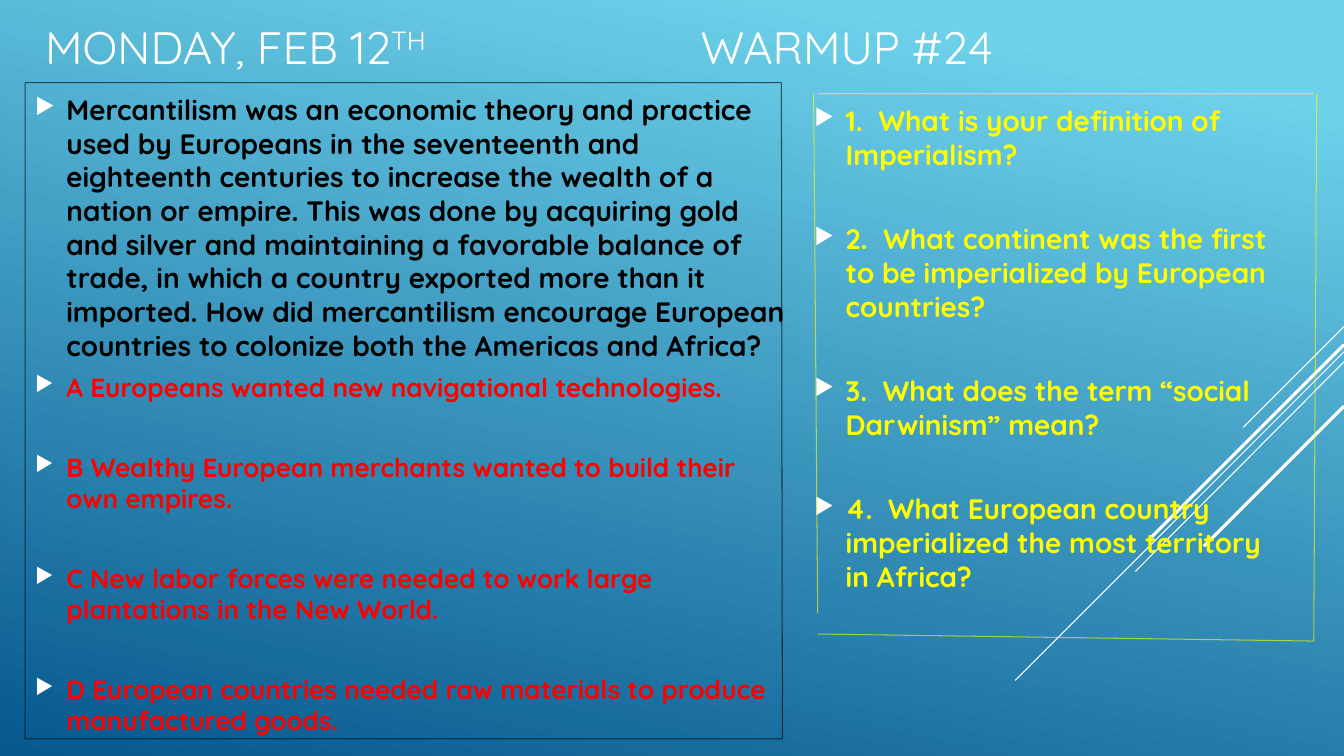
import pptx
import pptx.dml.color
import pptx.enum.shapes
import pptx.enum.text
import pptx.oxml
import pptx.oxml.ns
import pptx.util

RGBColor = pptx.dml.color.RGBColor
Pt = pptx.util.Pt

WHITE = RGBColor(0xFF, 0xFF, 0xFF)
BLACK = RGBColor(0x00, 0x00, 0x00)
RED = RGBColor(0xFF, 0x00, 0x00)
YELLOW = RGBColor(0xFF, 0xFF, 0x00)
SKY = RGBColor(0x6E, 0xD2, 0xEB)
DEEP_BLUE = RGBColor(0x06, 0x58, 0x8E)

STREAKS = [
    ((1333, 324), (1233, 424), 0.75),
    ((1333, 349), (1007, 675), 0.75),
    ((1333, 359), (1126, 567), 0.75),
    ((1333, 342), (1142, 533), 2.25),
    ((1333, 403), (1194, 542), 2.25),
]
QUESTION_FRAME = [
    ((775, 82), (776, 733)),
    ((775, 82), (25, 82)),
    ((25, 82), (25, 733)),
    ((25, 733), (776, 733)),
]
WARMUP_FRAME = [
    ((807, 93), (811, 608)),
    ((811, 93), (1303, 93)),
    ((1306, 93), (1303, 636)),
    ((1303, 636), (811, 629)),
]
QUESTION = (
    "Mercantilism was an economic theory and practice used by Europeans in the "
    "seventeenth and eighteenth centuries to increase the wealth of a nation or "
    "empire. This was done by acquiring gold and silver and maintaining a favorable "
    "balance of trade, in which a country exported more than it imported. How did "
    "mercantilism encourage European countries to colonize both the Americas and Africa?"
)
ANSWERS = [
    "A Europeans wanted new navigational technologies.",
    "B Wealthy European merchants wanted to build their own empires.",
    "C New labor forces were needed to work large plantations in the New World.",
    "D European countries needed raw materials to produce manufactured goods.",
]
WARMUPS = [
    "1.  What is your definition of Imperialism?",
    "2.  What continent was the first to be imperialized by European countries?",
    "3.  What does the term “social Darwinism” mean?",
    "4.  What European country imperialized the most territory in Africa?",
]
QUESTION_FORMAT = {"size": Pt(20), "color": BLACK, "bold": True}
ANSWER_FORMAT = {"size": Pt(18.7), "color": RED, "bold": True}
WARMUP_FORMAT = {"size": Pt(20), "color": YELLOW, "bold": True}
TITLE_FORMAT = {"size": Pt(32.4), "color": WHITE, "bold": False}


class SlideBuilder:
    FONT = "Quicksand"
    SCALE = 9144  # EMU in one px, 100 px to the inch
    INSET = 10
    INDENT = 31

    def __init__(self, deck):
        self.page = deck.slides.add_slide(deck.slide_layouts[6])

    @classmethod
    def px(cls, length):
        return pptx.util.Emu(length * cls.SCALE)

    @staticmethod
    def append_xml(parent, tag, content="", **attributes):
        values = "".join(f' {name}="{value}"' for name, value in attributes.items())
        namespace = pptx.oxml.ns.nsdecls("a")
        parent.append(pptx.oxml.parse_xml(
            f"<a:{tag} {namespace}{values}>{content}</a:{tag}>"))

    def background(self, colors, positions, angle):
        """Fill the page with a gradient; the angle runs clockwise."""
        fill = self.page.background.fill
        fill.gradient()
        fill.gradient_angle = 360 - angle
        for stop, color, position in zip(fill.gradient_stops, colors, positions):
            stop.color.rgb = color
            stop.position = position

    def line(self, start, end, color, width=0.75, opacity=100):
        connector = self.page.shapes.add_connector(
            pptx.enum.shapes.MSO_CONNECTOR.STRAIGHT,
            *(self.px(length) for length in (*start, *end)))
        connector.line.color.rgb = color
        connector.line.width = Pt(width)
        properties = connector._element.spPr
        if opacity < 100:
            color_node = properties.find(".//" + pptx.oxml.ns.qn("a:srgbClr"))
            self.append_xml(color_node, "alpha", val=opacity * 1000)
        self.append_xml(properties, "effectLst")

    def text_box(self, left, top, width, height, anchor):
        box = self.page.shapes.add_textbox(
            *(self.px(length) for length in (left, top, width, height)))
        inset = self.px(self.INSET)
        settings = {
            "word_wrap": True, "vertical_anchor": anchor,
            "margin_left": inset, "margin_right": inset,
            "margin_top": inset, "margin_bottom": inset,
        }
        for name, value in settings.items():
            setattr(box.text_frame, name, value)
        return box.text_frame

    def span(self, para, text, style):
        span = para.add_run()
        span.text = text
        span.font.name = self.FONT
        for name, value in style.items():
            if name == "color":
                span.font.color.rgb = value
            else:
                setattr(span.font, name, value)
        return span

    def title(self, area, day, suffix, heading, tab):
        """Write the day with a raised suffix, then the heading at a tab stop."""
        frame = self.text_box(*area, pptx.enum.text.MSO_ANCHOR.MIDDLE)
        para = frame.paragraphs[0]
        self.append_xml(para._p.get_or_add_pPr(), "tabLst",
                        f'<a:tab pos="{self.px(tab)}" algn="l"/>')
        self.span(para, day, TITLE_FORMAT)
        raised = self.span(para, suffix, TITLE_FORMAT)
        raised._r.get_or_add_rPr().set("baseline", "30000")
        self.span(para, "\t" + heading, TITLE_FORMAT)

    def bullets(self, area, items):
        """Write items of (text, format, line spacing, space after in points)."""
        frame = self.text_box(*area, pptx.enum.text.MSO_ANCHOR.TOP)
        for index, (text, style, pitch, gap) in enumerate(items):
            para = frame.add_paragraph() if index else frame.paragraphs[0]
            para.line_spacing = Pt(pitch)
            para.space_after = Pt(gap)
            properties = para._p.get_or_add_pPr()
            properties.set("marL", str(self.px(self.INDENT)))
            properties.set("indent", str(self.px(-self.INDENT)))
            self.append_xml(properties, "buClr", f'<a:srgbClr val="{WHITE}"/>')
            self.append_xml(properties, "buSzPct", val=80000)
            self.append_xml(properties, "buChar", char="▶")
            self.span(para, text, style)


def main():
    deck = pptx.Presentation()
    deck.slide_width = SlideBuilder.px(1333)
    deck.slide_height = SlideBuilder.px(750)
    builder = SlideBuilder(deck)

    builder.background((SKY, DEEP_BLUE), (0.1, 1.0), 102)
    for start, end, width in STREAKS:
        builder.line(start, end, WHITE, width)

    builder.title((35, 10, 1242, 72), "MONDAY, FEB 12", "TH", "WARMUP #24", 650)
    builder.bullets(
        (25, 82, 765, 652),
        [(QUESTION, QUESTION_FORMAT, 24, 7)]
        + [(answer, ANSWER_FORMAT, 22.2, 35) for answer in ANSWERS])
    builder.bullets(
        (798, 93, 490, 640),
        [(warmup, WARMUP_FORMAT, 24, 36.4) for warmup in WARMUPS])

    for edges, color in ((QUESTION_FRAME, BLACK), (WARMUP_FRAME, YELLOW)):
        for start, end in edges:
            builder.line(start, end, color, opacity=60)

    deck.save("out.pptx")


if __name__ == "__main__":
    main()
